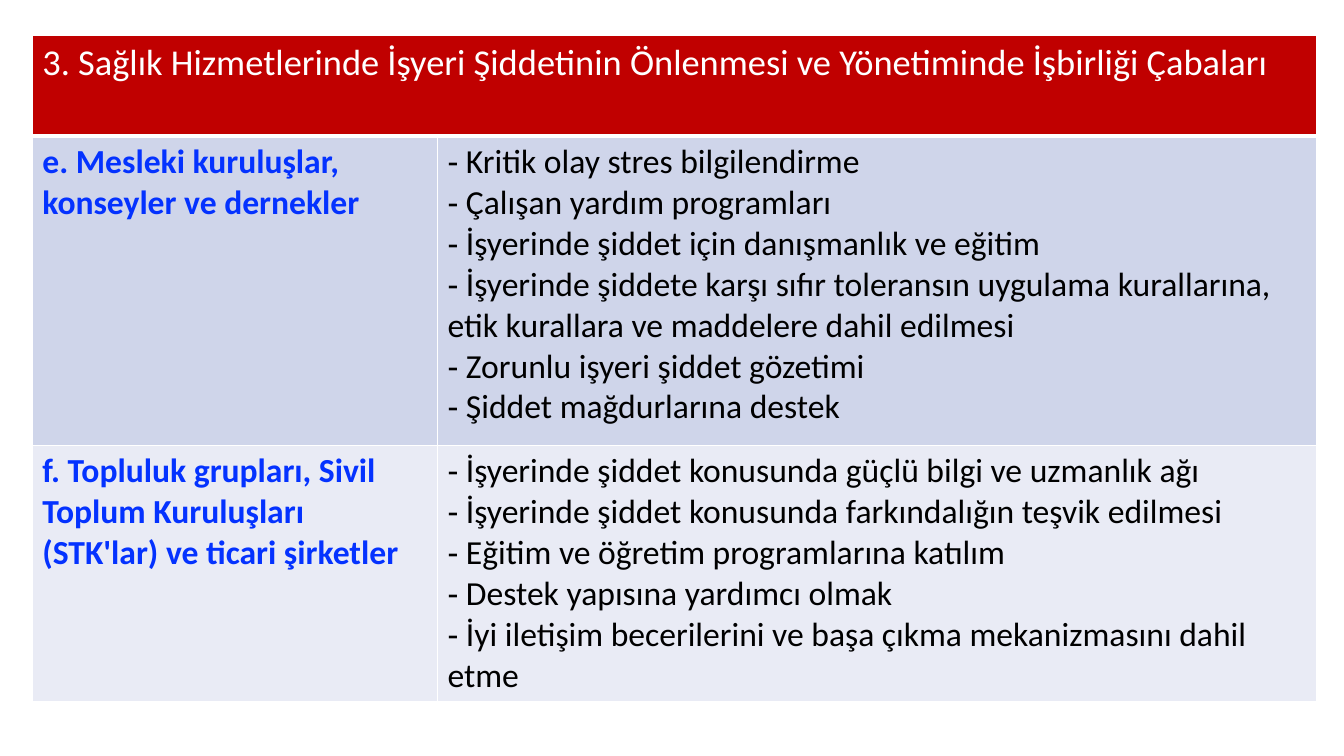
from pptx import Presentation
from pptx.dml.color import RGBColor
from pptx.oxml import parse_xml
from pptx.oxml.ns import nsdecls
from pptx.util import Inches, Pt

TITLE = "3. Sağlık Hizmetlerinde İşyeri Şiddetinin Önlenmesi ve Yönetiminde İşbirliği Çabaları"
# Group, efforts, row colour
GROUPS = [
    ("e. Mesleki kuruluşlar, konseyler ve dernekler", [
        "Kritik olay stres bilgilendirme",
        "Çalışan yardım programları",
        "İşyerinde şiddet için danışmanlık ve eğitim",
        "İşyerinde şiddete karşı sıfır toleransın uygulama kurallarına, "
        "etik kurallara ve maddelere dahil edilmesi",
        "Zorunlu işyeri şiddet gözetimi",
        "Şiddet mağdurlarına destek",
    ], "CFD5EA"),
    ("f. Topluluk grupları, Sivil Toplum Kuruluşları (STK'lar) ve ticari şirketler", [
        "İşyerinde şiddet konusunda güçlü bilgi ve uzmanlık ağı",
        "İşyerinde şiddet konusunda farkındalığın teşvik edilmesi",
        "Eğitim ve öğretim programlarına katılım",
        "Destek yapısına yardımcı olmak",
        "İyi iletişim becerilerini ve başa çıkma mekanizmasını dahil etme",
    ], "E9EBF5"),
]
COLUMN_WIDTHS = [4.02, 8.72]
ROW_HEIGHTS = [1, 3.07, 2.5]


def color(hex_string):
    return RGBColor.from_string(hex_string)


def write_text(text_frame, lines, size=24, hex_color="000000", bold=False):
    for index, line in enumerate(lines):
        paragraph = text_frame.paragraphs[0] if index == 0 else text_frame.add_paragraph()
        run = paragraph.add_run()
        run.text = line
        run.font.name = "Calibri"
        run.font.size = Pt(size)
        run.font.bold = bold
        run.font.color.rgb = color(hex_color)


def format_cell(cell, fill, bottom=1):
    properties = cell._tc.get_or_add_tcPr()
    for side, width in (("L", 1), ("R", 1), ("T", 1), ("B", bottom)):
        properties.append(parse_xml(
            f'<a:ln{side} {nsdecls("a")} w="{Pt(width)}"><a:solidFill>'
            f'<a:srgbClr val="FFFFFF"/></a:solidFill></a:ln{side}>'))
    cell.fill.solid()
    cell.fill.fore_color.rgb = color(fill)


def add_efforts_table(slide, left, top, width, height):
    table = slide.shapes.add_table(
        len(ROW_HEIGHTS), len(COLUMN_WIDTHS),
        Inches(left), Inches(top), Inches(width), Inches(height)).table
    for column, column_width in zip(table.columns, COLUMN_WIDTHS):
        column.width = Inches(column_width)
    for row, row_height in zip(table.rows, ROW_HEIGHTS):
        row.height = Inches(row_height)

    # Header across both columns
    header = table.cell(0, 0)
    header.merge(table.cell(0, 1))
    for cell in table.rows[0].cells:
        format_cell(cell, "C00000", bottom=3)
    write_text(header.text_frame, [TITLE], size=26, hex_color="FFFFFF")

    # One row for each group
    for row_index, (group, efforts, fill) in enumerate(GROUPS, start=1):
        group_cell, efforts_cell = table.rows[row_index].cells
        format_cell(group_cell, fill)
        format_cell(efforts_cell, fill)
        write_text(group_cell.text_frame, [group], hex_color="0432FF", bold=True)
        write_text(efforts_cell.text_frame, [f"⁃ {effort}" for effort in efforts])


def main():
    presentation = Presentation()
    presentation.slide_width = Inches(13.33)
    presentation.slide_height = Inches(7.5)
    slide = presentation.slides.add_slide(presentation.slide_layouts[6])
    add_efforts_table(slide, 0.32, 0.35, sum(COLUMN_WIDTHS), sum(ROW_HEIGHTS))
    presentation.save("out.pptx")


if __name__ == "__main__":
    main()
